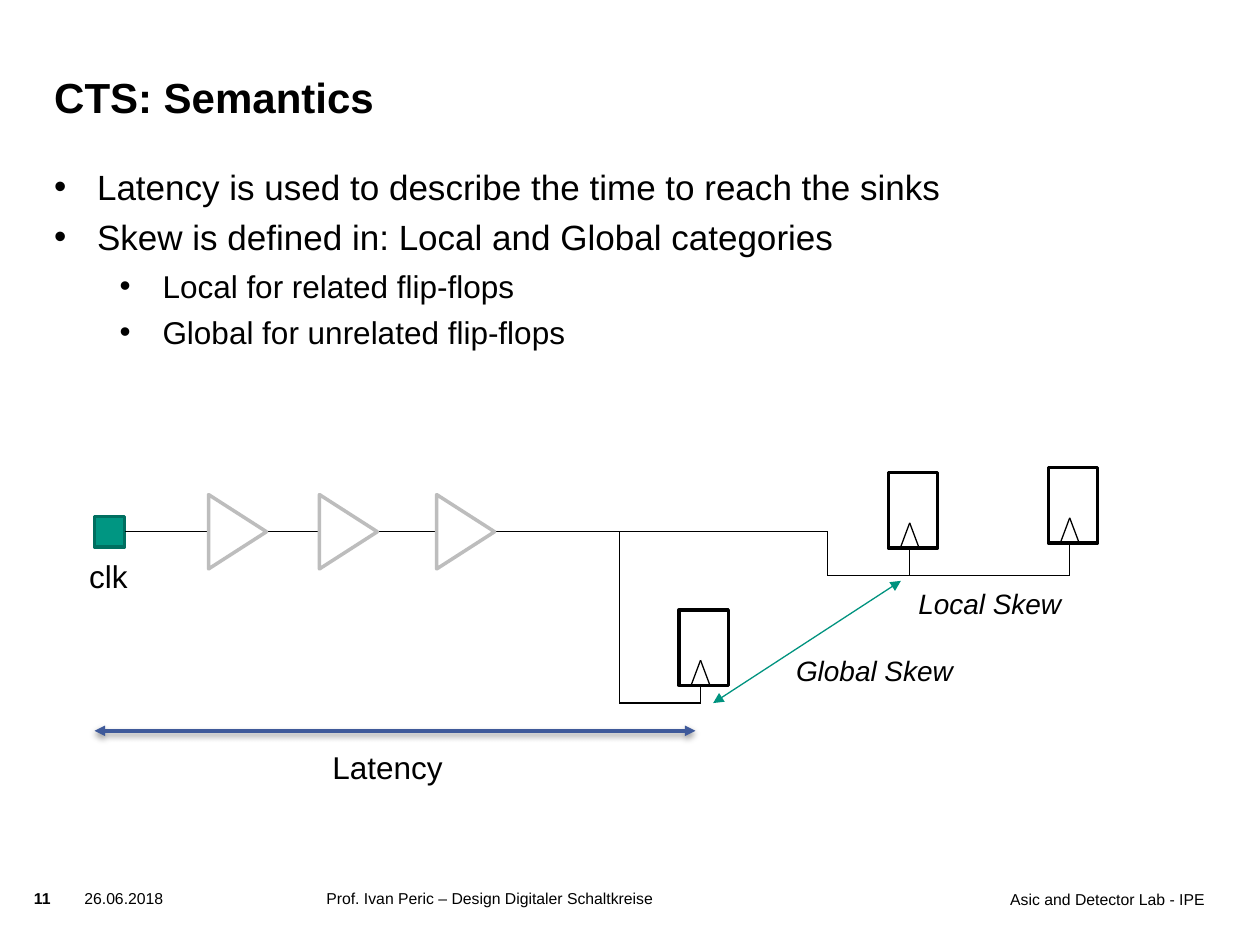
"""Build the slide that explains clock tree latency and skew."""
from dataclasses import dataclass
from typing import Any

import pptx
import pptx.dml.color
import pptx.enum.shapes
import pptx.enum.text
import pptx.oxml
import pptx.oxml.ns
import pptx.util

Align = pptx.enum.text.PP_ALIGN
Shape = pptx.enum.shapes.MSO_SHAPE
Point = tuple[float, float]


@dataclass(frozen=True)
class Theme:
    font: str = "Arial"
    ink: str = "000000"
    paper: str = "FFFFFF"
    clock: str = "009682"
    clock_edge: str = "006F60"
    buffer_edge: str = "BDBDBD"
    latency: str = "3F5A9A"
    skew: str = "00937F"
    title: int = 24
    levels: tuple[int, int] = (20, 18)
    label: int = 18
    skew_label: int = 16
    footer: int = 9
    bullet_gap: int = 5
    thin: float = 0.75
    thick: float = 2


@dataclass(frozen=True)
class Box:
    """A rectangle in grid columns and rows."""
    col: float
    row: float
    cols: float
    rows: float


@dataclass(frozen=True)
class Caption:
    words: str
    box: Box
    size: int
    bold: bool = False
    italic: bool = False
    align: Any = Align.LEFT
    footer: bool = False


THEME = Theme()
COLUMNS, ROWS = 100, 75
CELL = pptx.util.Inches(10) // COLUMNS
TRUNK = 42.2
BRANCH = 45.7
LOW_BRANCH = 55.8
SPLIT, TURN = 49.15, 65.7
FLIP_FLOP = (3.9, 6.0)
CLOCK_PIN = 1.7
FLIP_FLOPS = [(70.5, 37.5, BRANCH), (53.9, 48.4, LOW_BRANCH), (83.2, 37.1, BRANCH)]
BUFFERS = [15.9, 24.7, 34.0]

BULLETS = [
    (0, "Latency is used to describe the time to reach the sinks"),
    (0, "Skew is defined in: Local and Global categories"),
    (1, "Local for related flip-flops"),
    (1, "Global for unrelated flip-flops"),
]
CAPTIONS = [
    Caption("Asic and Detector Lab - IPE", Box(65.7, 70.6, 29.9, 3.9), THEME.footer,
            align=Align.RIGHT, footer=True),
    Caption("11", Box(2.7, 70.5, 3.6, 2.4), THEME.footer, bold=True, footer=True),
    Caption("26.06.2018", Box(6.7, 70.5, 9.4, 3.9), THEME.footer, footer=True),
    Caption("Prof. Ivan Peric – Design Digitaler Schaltkreise", Box(25.9, 70.5, 29.9, 3.9),
            THEME.footer, footer=True),
    Caption("clk", Box(6.1, 43.7, 5.1, 4), THEME.label),
    Caption("Latency", Box(25.4, 58.9, 10.9, 4), THEME.label),
    Caption("Local Skew", Box(71.9, 46.1, 13.5, 3.7), THEME.skew_label, italic=True),
    Caption("Global Skew", Box(62.2, 51.4, 14.6, 3.7), THEME.skew_label, italic=True),
]
SHADOW = ('<a:outerShdw blurRad="40000" dist="20000" dir="5400000" rotWithShape="0">'
          '<a:srgbClr val="000000"><a:alpha val="38000"/></a:srgbClr></a:outerShdw>')


def cells(count: float) -> int:
    return round(count * CELL)


def rgb(code: str) -> pptx.dml.color.RGBColor:
    return pptx.dml.color.RGBColor.from_string(code)


def xml(tag: str, attributes: str = "", inner: str = "") -> Any:
    return pptx.oxml.parse_xml(
        f'<a:{tag} {pptx.oxml.ns.nsdecls("a")} {attributes}>{inner}</a:{tag}>')


def place(item: Any, box: Box) -> None:
    item.left, item.top = cells(box.col), cells(box.row)
    item.width, item.height = cells(box.cols), cells(box.rows)


def clear_insets(frame: Any) -> None:
    frame.margin_left = frame.margin_right = frame.margin_top = frame.margin_bottom = 0
    frame.auto_size = pptx.enum.text.MSO_AUTO_SIZE.NONE
    frame.word_wrap = True


def write(paragraph: Any, words: str, size: int, bold: bool = False,
          italic: bool = False) -> None:
    run = paragraph.add_run()
    run.text = words
    run.font.name, run.font.size = THEME.font, pptx.util.Pt(size)
    run.font.bold, run.font.italic = bold, italic
    run.font.color.rgb = rgb(THEME.ink)


def draw_caption(shapes: Any, caption: Caption) -> None:
    box = caption.box
    frame = shapes.add_textbox(*map(cells, (box.col, box.row, box.cols, box.rows))).text_frame
    if caption.footer:
        clear_insets(frame)
    else:
        frame.word_wrap = False
        frame.auto_size = pptx.enum.text.MSO_AUTO_SIZE.SHAPE_TO_FIT_TEXT
    frame.paragraphs[0].alignment = caption.align
    write(frame.paragraphs[0], caption.words, caption.size, caption.bold, caption.italic)


def draw_shape(shapes: Any, kind: Any, box: Box, fill: str, edge: str) -> Any:
    shape = shapes.add_shape(kind, *map(cells, (box.col, box.row, box.cols, box.rows)))
    shape.shadow.inherit = False
    shape.fill.solid()
    shape.fill.fore_color.rgb = rgb(fill)
    shape.line.color.rgb = rgb(edge)
    shape.line.width = pptx.util.Pt(THEME.thick)
    return shape


def draw_line(shapes: Any, start: Point, end: Point, color: str = THEME.ink,
              width: float = THEME.thin, arrows: bool = False, effect: str = "") -> Any:
    line = shapes.add_connector(pptx.enum.shapes.MSO_CONNECTOR.STRAIGHT,
                                *map(cells, (*start, *end)))
    line.line.color.rgb = rgb(color)
    line.line.width = pptx.util.Pt(width)
    if arrows:
        for tip in ("headEnd", "tailEnd"):
            line.line._ln.append(xml(tip, 'type="triangle"'))
    line._element.spPr.append(xml("effectLst", inner=effect))
    return line


def draw_flip_flop(shapes: Any, col: float, row: float, net: float) -> None:
    group = shapes.add_group_shape().shapes
    width, height = FLIP_FLOP
    pin, bottom = col + CLOCK_PIN, row + height
    draw_shape(group, Shape.RECTANGLE, Box(col, row, width, height), THEME.paper, THEME.ink)
    for side in (-0.75, 0.75):
        draw_line(group, (pin + side, bottom), (pin, bottom - 2))
    draw_line(shapes, (pin, bottom), (pin, net))


def fill_placeholders(slide: Any) -> None:
    title, body = slide.shapes.title, slide.placeholders[1]
    place(title, Box(4.3, 3.6, 75.6, 6.1))
    place(body, Box(4.3, 13.1, 91.4, 53.5))
    for holder in (title, body):
        clear_insets(holder.text_frame)
    title.text_frame.vertical_anchor = pptx.enum.text.MSO_ANCHOR.BOTTOM
    heading = title.text_frame.paragraphs[0]
    heading.alignment = Align.LEFT
    write(heading, "CTS: Semantics", THEME.title, bold=True)
    for index, (level, words) in enumerate(BULLETS):
        frame = body.text_frame
        point = frame.add_paragraph() if index else frame.paragraphs[0]
        point.level = level
        point.space_before = pptx.util.Pt(THEME.bullet_gap if index else 0)
        properties = point._p.get_or_add_pPr()
        properties.set("marL", str(cells((3.4, 8.6)[level])))
        properties.set("indent", str(cells(-3.4)))
        properties.append(xml("buFont", f'typeface="{THEME.font}"'))
        properties.append(xml("buChar", 'char="•"'))
        write(point, words, THEME.levels[level])


def draw_clock_tree(shapes: Any) -> None:
    clock = draw_shape(shapes, Shape.RECTANGLE, Box(7.5, TRUNK - 1.2, 2.4, 2.4),
                       THEME.clock, THEME.clock_edge)
    trunk = draw_line(shapes, (9.9, TRUNK), (TURN, TRUNK))
    trunk.begin_connect(clock, 3)
    for flip_flop in FLIP_FLOPS:
        draw_flip_flop(shapes, *flip_flop)
    low_pin, far_pin = (FLIP_FLOPS[i][0] + CLOCK_PIN for i in (1, 2))
    for col, net, pin in ((SPLIT, LOW_BRANCH, low_pin), (TURN, BRANCH, far_pin)):
        draw_line(shapes, (col, TRUNK), (col, net))
        draw_line(shapes, (col, net), (pin, net))
    for col in BUFFERS:
        stage = draw_shape(shapes, Shape.ISOSCELES_TRIANGLE, Box(col, TRUNK - 2.3, 5.9, 4.6),
                           THEME.paper, THEME.buffer_edge)
        stage.rotation = 90
    draw_line(shapes, (7.5, 58), (55.2, 58), THEME.latency, THEME.thick, True, SHADOW)
    draw_line(shapes, (56.6, LOW_BRANCH), (71.5, 46.1), THEME.skew, arrows=True)


def main() -> None:
    deck = pptx.Presentation()
    deck.slide_width, deck.slide_height = cells(COLUMNS), cells(ROWS)
    slide = deck.slides.add_slide(deck.slide_layouts[1])
    fill_placeholders(slide)
    draw_clock_tree(slide.shapes)
    for caption in CAPTIONS:
        draw_caption(slide.shapes, caption)
    deck.save("out.pptx")


if __name__ == "__main__":
    main()
